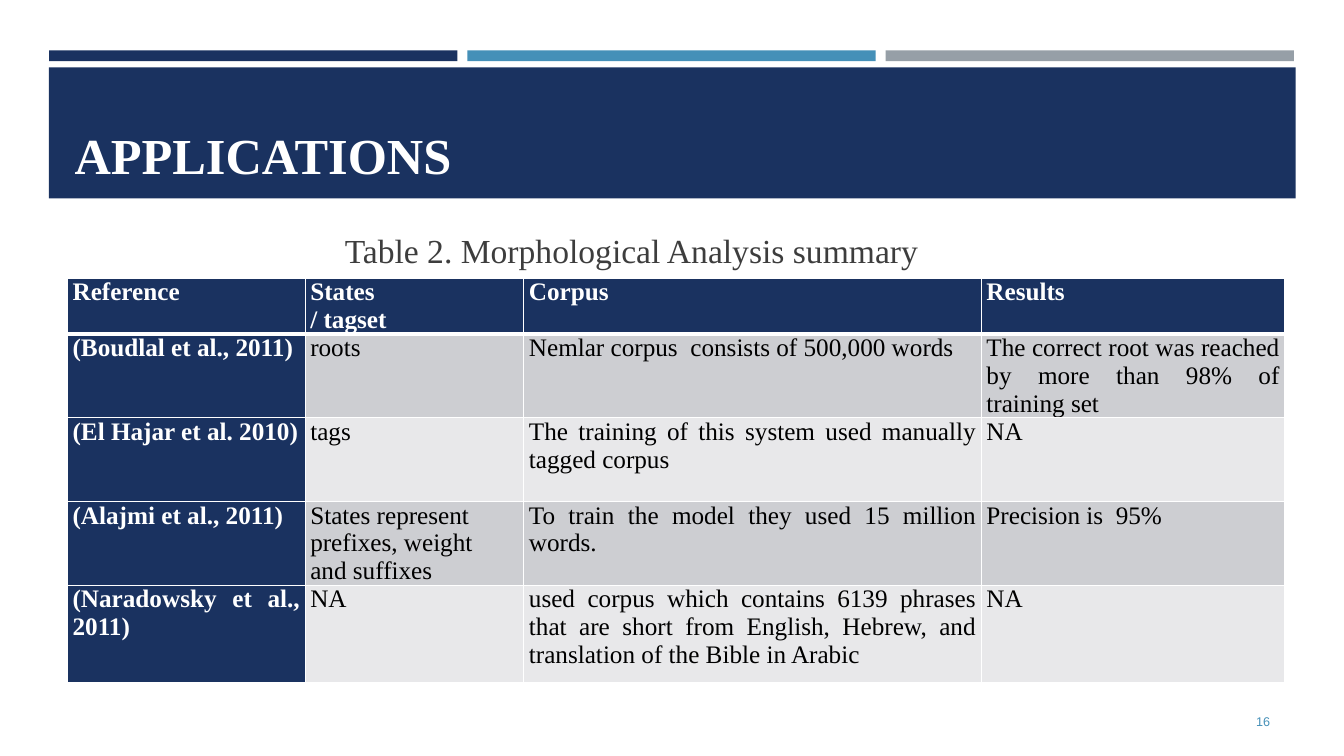
"""Build the slide that sums up work on morphological analysis."""
import dataclasses
import typing

import pptx
import pptx.dml.color
import pptx.enum.shapes
import pptx.enum.text
import pptx.oxml
import pptx.oxml.ns
import pptx.util

Cm = pptx.util.Cm
Pt = pptx.util.Pt
Align = pptx.enum.text.PP_ALIGN
Anchor = pptx.enum.text.MSO_ANCHOR


@dataclasses.dataclass(frozen=True)
class Theme:
    """Colours, fonts and type sizes."""
    navy: str = "1A3260"
    blue: str = "4590B8"
    grey: str = "969FA7"
    white: str = "FFFFFF"
    black: str = "000000"
    ink: str = "3D3D3D"
    dark: str = "CDCED2"
    light: str = "E8E8EA"
    serif: str = "Times New Roman"
    sans: str = "Arial"
    title: int = 36
    caption: int = 24
    body: int = 18
    small: int = 9


THEME = Theme()


class Box(typing.NamedTuple):
    """A place on the slide, in centimetres."""
    left: float
    top: float
    width: float
    height: float

    def place(self) -> tuple:
        """Return the place as lengths."""
        return tuple(Cm(side) for side in self)


@dataclasses.dataclass(frozen=True)
class Style:
    """How a text looks."""
    size: int
    color: str
    font: str = THEME.serif
    bold: bool = False
    align: Align = Align.LEFT


@dataclasses.dataclass(frozen=True)
class Label:
    """A text box."""
    text: str
    box: Box
    style: Style
    anchor: Anchor = Anchor.TOP


@dataclasses.dataclass(frozen=True)
class Block:
    """A plain filled rectangle."""
    box: Box
    color: str


BLOCKS = [
    Block(Box(1.24 + 10.54 * i, 1.27, 10.29, 0.27), color)
    for i, color in enumerate((THEME.navy, THEME.blue, THEME.grey))
] + [Block(Box(1.23, 1.7, 31.42, 3.3), THEME.navy)]

LABELS = [
    Label("APPLICATIONS", Box(1.63, 1.96, 30.63, 2.82),
          Style(THEME.title, THEME.white, bold=True), Anchor.BOTTOM),
    Label("16", Box(29.34, 17.68, 2.92, 1.02),
          Style(THEME.small, THEME.blue, THEME.sans, align=Align.RIGHT), Anchor.MIDDLE),
    Label("Table 2. Morphological Analysis summary", Box(6.48, 5.66, 18.87, 0.86),
          Style(THEME.caption, THEME.ink, align=Align.CENTER)),
]

COLS = (5.99, 5.51, 11.53, 7.65)
ROWS = (1.4, 2.11, 2.11, 2.11, 2.46)
GRID = Box(1.7, 7.01, sum(COLS), sum(ROWS))
CELLS = (
    ("Reference", "States\n/ tagset", "Corpus", "Results"),
    ("(Boudlal et al., 2011)", "roots", "Nemlar corpus  consists of 500,000 words",
     "The correct root was reached by more than 98% of training set"),
    ("(El Hajar et al. 2010)", "tags",
     "The training of this system used manually tagged corpus", "NA"),
    ("(Alajmi et al., 2011)", "States represent\nprefixes, weight\nand suffixes",
     "To train the model they used 15 million words.", "Precision is  95%"),
    ("(Naradowsky et al., 2011)", "NA",
     "used corpus which contains 6139 phrases that are short from English, "
     "Hebrew, and translation of the Bible in Arabic", "NA"),
)


def paint(fill: typing.Any, color: str) -> None:
    """Give a fill one solid colour."""
    fill.solid()
    fill.fore_color.rgb = pptx.dml.color.RGBColor.from_string(color)


def write(frame: typing.Any, text: str, style: Style) -> None:
    """Put styled text in a frame, one paragraph a line."""
    frame.word_wrap = True
    frame.text = text
    for para in frame.paragraphs:
        para.alignment = style.align
        font = para.font
        font.name, font.size, font.bold = style.font, Pt(style.size), style.bold
        font.color.rgb = pptx.dml.color.RGBColor.from_string(style.color)


def draw_block(slide: typing.Any, block: Block) -> None:
    """Draw a filled rectangle."""
    kind = pptx.enum.shapes.MSO_SHAPE.RECTANGLE
    shape = slide.shapes.add_shape(kind, *block.box.place())
    shape.shadow.inherit = False
    paint(shape.fill, block.color)
    shape.line.fill.background()


def draw_label(slide: typing.Any, label: Label) -> None:
    """Draw a text box."""
    frame = slide.shapes.add_textbox(*label.box.place()).text_frame
    write(frame, label.text, label.style)
    frame.vertical_anchor = label.anchor


def edge(cell: typing.Any, top: int, bottom: int) -> None:
    """Rule a cell in white, with the top and bottom widths in points."""
    props = cell._tc.get_or_add_tcPr()
    space = pptx.oxml.ns.nsdecls("a")
    widths = {"lnL": 1, "lnR": 1, "lnT": top, "lnB": bottom}
    for spot, (tag, width) in enumerate(widths.items()):
        props.insert(spot, pptx.oxml.parse_xml(
            f'<a:{tag} {space} w="{Pt(width)}"><a:solidFill>'
            f'<a:srgbClr val="{THEME.white}"/></a:solidFill></a:{tag}>'))


def draw_cell(cell: typing.Any, text: str, row: int, col: int) -> None:
    """Fill, rule and write one table cell."""
    head = row == 0 or col == 0
    band = THEME.dark if row % 2 else THEME.light
    paint(cell.fill, THEME.navy if head else band)
    edge(cell, 3 if row == 1 else 1, 3 if row == 0 else 1)
    cell.margin_left = cell.margin_right = Cm(0.13)
    cell.margin_top = cell.margin_bottom = 0
    write(cell.text_frame, text, Style(
        THEME.body, THEME.white if head else THEME.black, bold=head,
        align=Align.JUSTIFY if row else Align.LEFT))


def draw_table(slide: typing.Any) -> None:
    """Draw the summary table."""
    table = slide.shapes.add_table(len(ROWS), len(COLS), *GRID.place()).table
    table.first_col = True
    for col, width in zip(table.columns, COLS):
        col.width = Cm(width)
    for row, height in zip(table.rows, ROWS):
        row.height = Cm(height)
    for i, texts in enumerate(CELLS):
        for j, text in enumerate(texts):
            draw_cell(table.cell(i, j), text, i, j)


def main() -> None:
    """Build and save the deck."""
    deck = pptx.Presentation()
    deck.slide_width, deck.slide_height = Cm(33.87), Cm(19.05)
    slide = deck.slides.add_slide(deck.slide_layouts[6])
    for block in BLOCKS:
        draw_block(slide, block)
    draw_table(slide)
    for label in LABELS:
        draw_label(slide, label)
    deck.save("out.pptx")


if __name__ == "__main__":
    main()
